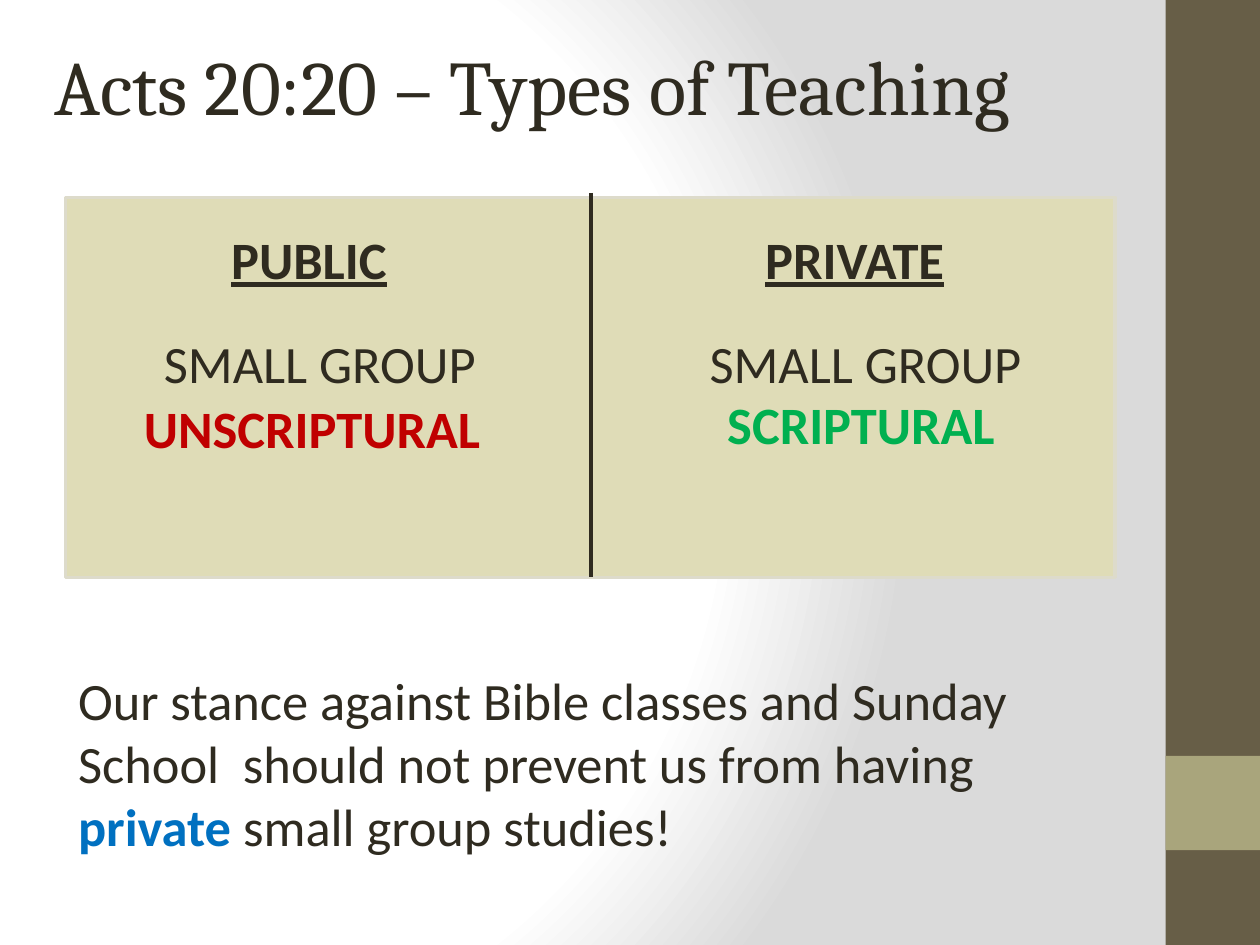
from dataclasses import dataclass

from lxml.etree import SubElement
from pptx import Presentation
from pptx.dml.color import RGBColor as RGB
from pptx.enum.shapes import MSO_CONNECTOR as CONN, MSO_SHAPE as SHAPE
from pptx.enum.text import MSO_ANCHOR as ANCHOR, MSO_AUTO_SIZE as AUTO, PP_ALIGN as ALIGN
from pptx.oxml import parse_xml
from pptx.oxml.ns import nsdecls, qn
from pptx.util import Cm, Pt


@dataclass(frozen=True)
class Theme:
    ink: str = "2F2B20"
    bar: str = "675E47"
    accent: str = "A9A57C"
    panel: str = "DFDCB7"
    panel_edge: str = "DDDBCB"
    red: str = "C00000"
    green: str = "00B050"
    blue: str = "0070C0"
    glow: str = "FFFFFF"
    shade: str = "DADADA"
    head_font: str = "Cambria"
    body_font: str = "Calibri"
    title_size: int = 44
    body_size: int = 30


T = Theme()
COLUMN_STEP = 11


def set_background(s):
    """Radial gradient, light at the left and grey at the right edge."""
    stops = "".join(
        f'<a:gs pos="{pos * 1000}"><a:srgbClr val="{color}"/></a:gs>'
        for pos, color in ((0, T.glow), (75, T.glow), (100, T.shade)))
    fill = s.background.fill
    fill.solid()
    bg_pr = s.element.find(".//" + qn("p:bgPr"))
    bg_pr.replace(bg_pr.find(qn("a:solidFill")), parse_xml(
        f'<a:gradFill rotWithShape="1" {nsdecls("a")}><a:gsLst>{stops}</a:gsLst>'
        '<a:path path="circle"><a:fillToRect l="20000" t="50000" r="100000" b="50000"/>'
        '</a:path></a:gradFill>'))


def add_box(s, left, top, width, height, fill, edge=None):
    sp = s.shapes.add_shape(SHAPE.RECTANGLE, Cm(left), Cm(top), Cm(width), Cm(height))
    sp.shadow.inherit = False
    sp.fill.solid()
    sp.fill.fore_color.rgb = RGB.from_string(fill)
    if edge:
        sp.line.color.rgb = RGB.from_string(edge)
        sp.line.width = Pt(2)
    else:
        sp.line.fill.background()


def add_divider(s, x, top, bottom):
    line = s.shapes.add_connector(CONN.STRAIGHT, Cm(x), Cm(top), Cm(x), Cm(bottom))
    line.line.color.rgb = RGB.from_string(T.ink)
    line.line.width = Pt(2.5)
    SubElement(line.element.spPr, qn("a:effectLst"))


def style_run(r, color=T.ink, font=T.body_font, size=T.body_size, bold=False, underline=False):
    r.font.name = font
    r.font.size = Pt(size)
    r.font.bold = bold
    r.font.underline = underline
    r.font.color.rgb = RGB.from_string(color)


def write(tf, runs, align=ALIGN.LEFT):
    """Fill a text frame with one paragraph of (text, style) runs."""
    tf.word_wrap = True
    tf.auto_size = AUTO.NONE
    tf.vertical_anchor = ANCHOR.TOP
    p = tf.paragraphs[0]
    p.alignment = align
    p.space_before = Pt(0)
    for text, style in runs:
        r = p.add_run()
        r.text = text
        style_run(r, **style)


def add_label(s, left, top, width, runs, align=ALIGN.CENTER):
    sp = s.shapes.add_textbox(Cm(left), Cm(top), Cm(width), Cm(1.54))
    write(sp.text_frame, runs, align)


def place(sp, left, top, width, height):
    sp.left, sp.top, sp.width, sp.height = Cm(left), Cm(top), Cm(width), Cm(height)


def remove_bullet(p):
    p_pr = p._p.get_or_add_pPr()
    p_pr.set("marL", "0")
    p_pr.set("indent", "0")
    SubElement(p_pr, qn("a:buNone"))


def add_column(s, offset, heading, verdict, color, verdict_top, verdict_align):
    add_label(s, 1.27 + offset, 4.45, 10.16,
              [(heading, dict(bold=True, underline=True)), (" ", dict(bold=True))])
    add_label(s, 1.9 + offset, 6.55, 9.1, [("SMALL GROUP", {})])
    add_label(s, 2.65 + offset, verdict_top, 7.42,
              [(verdict, dict(bold=True, color=color))], verdict_align)


def main():
    prs = Presentation()
    prs.slide_width, prs.slide_height = Cm(25.4), Cm(19.05)
    s = prs.slides.add_slide(prs.slide_layouts[1])
    title, body = s.placeholders
    set_background(s)

    add_box(s, 23.5, 0, 1.9, 19.05, T.bar)
    add_box(s, 23.5, 15.24, 1.9, 1.9, T.accent)
    add_box(s, 1.32, 3.98, 21.16, 7.66, T.panel, T.panel_edge)
    add_divider(s, 11.91, 3.89, 11.63)

    columns = (("PUBLIC", "UNSCRIPTURAL", T.red, 7.85, ALIGN.LEFT),
               ("PRIVATE", "SCRIPTURAL", T.green, 7.77, ALIGN.CENTER))
    for i, column in enumerate(columns):
        add_column(s, i * COLUMN_STEP, *column)

    place(title, 0.85, 0.64, 21.16, 2.14)
    write(title.text_frame, [("Acts 20:20 – Types of Teaching",
                              dict(font=T.head_font, size=T.title_size))])

    place(body, 1.32, 13.34, 20.68, 4.88)
    write(body.text_frame, [
        ("Our stance against Bible classes and Sunday School  should not prevent us from having ", {}),
        ("private", dict(color=T.blue, bold=True)),
        (" small group studies!", {})])
    remove_bullet(body.text_frame.paragraphs[0])

    prs.save("out.pptx")


if __name__ == "__main__":
    main()
